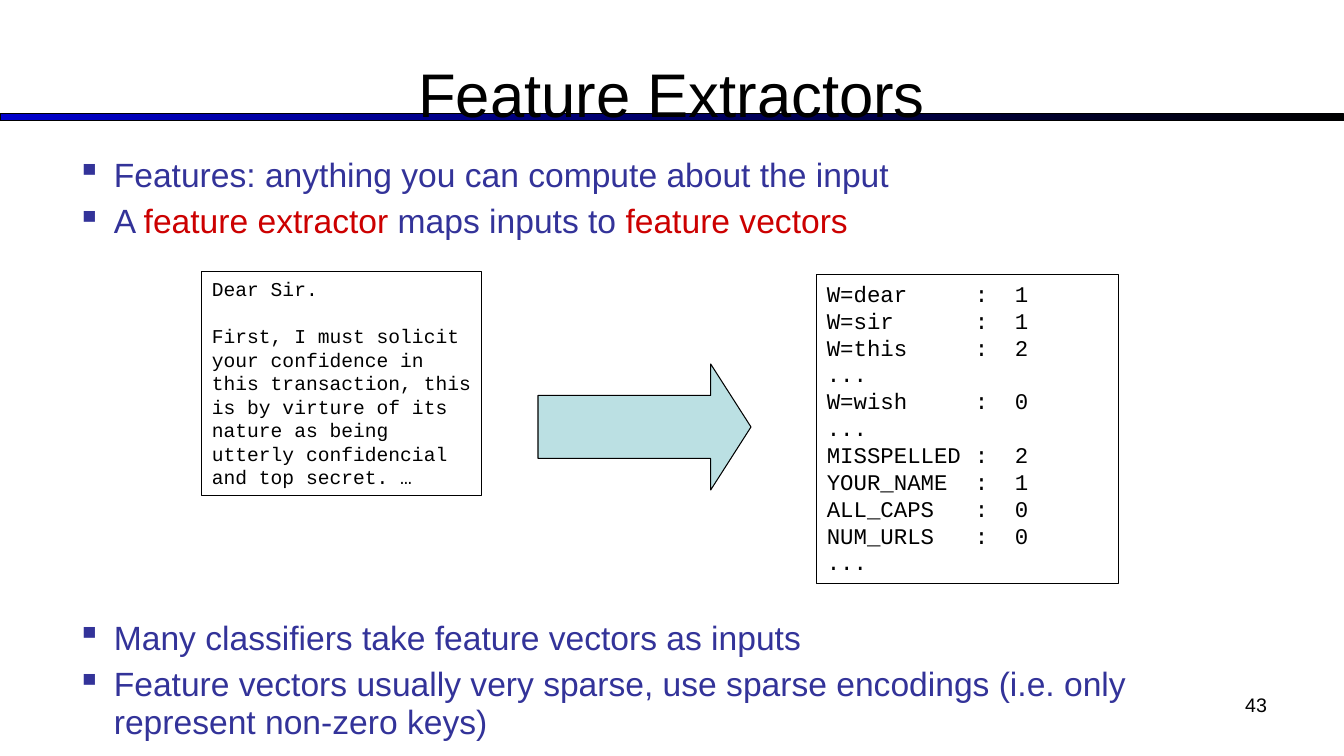
"""Build the Feature Extractors slide."""
from lxml import etree
from pptx import Presentation
from pptx import util as u
from pptx.dml.color import RGBColor
from pptx.enum import shapes, text
from pptx.oxml.ns import qn

PX = 12192000 / 1344
BLACK = RGBColor(0x00, 0x00, 0x00)
BLUE = RGBColor(0x00, 0x00, 0xCC)
INDIGO = RGBColor(0x33, 0x33, 0x99)
RED = RGBColor(0xCC, 0x00, 0x00)
TEAL = RGBColor(0xBB, 0xE0, 0xE3)

INTRO = [
    [("Features: anything you can compute about the input", INDIGO)],
    [("A ", INDIGO), ("feature extractor", RED),
     (" maps inputs to ", INDIGO), ("feature vectors", RED)],
]
CLOSING = [
    [("Many classifiers take feature vectors as inputs", INDIGO)],
    [("Feature vectors usually very sparse, use sparse encodings "
      "(i.e. only represent non-zero keys)", INDIGO)],
]
LETTER = [
    "Dear Sir.",
    "First, I must solicit your confidence in this transaction, this is by "
    "virture of its nature as being utterly confidencial and top secret. …",
]
FEATURES = [
    "W=dear\t:\t1", "W=sir\t:\t1", "W=this\t:\t2", "...", "W=wish\t:\t0", "...",
    "MISSPELLED\t:\t2", "YOUR_NAME\t:\t1", "ALL_CAPS\t:\t0", "NUM_URLS\t:\t0", "...",
]


def px(length):
    """Turn a length in px into EMU."""
    return u.Emu(round(length * PX))


def box(place):
    """Turn left, top, width and height in px into EMU."""
    return [px(length) for length in place]


def style(paragraph, size, face, color=BLACK, pitch=None):
    """Set the font and the line pitch of a paragraph."""
    if pitch:
        paragraph.line_spacing = u.Pt(pitch)
    paragraph.font.size = u.Pt(size)
    paragraph.font.name = face
    paragraph.font.color.rgb = color


def add_shape(slide, kind, place):
    """Add a thinly outlined shape without fill or shadow."""
    shape = slide.shapes.add_shape(kind, *box(place))
    shape.shadow.inherit = False
    shape.fill.background()
    shape.line.color.rgb = BLACK
    shape.line.width = u.Pt(0.75)
    return shape


def add_rule(slide):
    """Add the blue to black band under the title."""
    rule = add_shape(slide, shapes.MSO_SHAPE.RECTANGLE, (0, 114, 1344, 7))
    rule.fill.gradient()
    rule.fill.gradient_angle = 0
    for stop, color in zip(rule.fill.gradient_stops, (BLUE, BLACK)):
        stop.color.rgb = color


def add_label(slide, place, words, size, align, pitch=None):
    """Add a single line of text and return its frame."""
    frame = slide.shapes.add_textbox(*box(place)).text_frame
    frame.word_wrap = True
    line = frame.paragraphs[0]
    line.text = words
    line.alignment = align
    style(line, size, "Arial", pitch=pitch)
    return frame


def add_bullets(slide, place, points):
    """Add a list of square-bulleted points made of coloured runs."""
    frame = slide.shapes.add_textbox(*box(place)).text_frame
    frame.word_wrap = True
    for index, pieces in enumerate(points):
        point = frame.add_paragraph() if index else frame.paragraphs[0]
        point.space_before = u.Pt(6)
        style(point, 24, "Arial", INDIGO, 27.1)
        for words, color in pieces:
            run = point.add_run()
            run.text = words
            if color != INDIGO:
                run.font.color.rgb = color
        properties = point._p.get_or_add_pPr()
        properties.set("marL", str(px(37)))
        properties.set("indent", str(px(-37)))
        bullet = etree.Element(qn("a:buChar"), char="▪")
        properties.find(qn("a:defRPr")).addprevious(bullet)


def add_tab_stops(paragraph, stops):
    """Set left tab stops, given in px, on a paragraph."""
    tabs = etree.Element(qn("a:tabLst"))
    for stop in stops:
        etree.SubElement(tabs, qn("a:tab"), pos=str(px(stop)), algn="l")
    paragraph._p.get_or_add_pPr().find(qn("a:defRPr")).addprevious(tabs)


def add_listing(slide, place, lines, size, gap=0, stops=()):
    """Add a framed block of monospaced lines."""
    frame = add_shape(slide, shapes.MSO_SHAPE.RECTANGLE, place).text_frame
    frame.word_wrap = True
    frame.auto_size = text.MSO_AUTO_SIZE.SHAPE_TO_FIT_TEXT
    frame.vertical_anchor = text.MSO_ANCHOR.TOP
    for index, words in enumerate(lines):
        line = frame.add_paragraph() if index else frame.paragraphs[0]
        line.text = words
        line.alignment = text.PP_ALIGN.LEFT
        if index and gap:
            line.space_before = u.Pt(gap)
        style(line, size, "Courier New", pitch=size * 1.2)
        if stops:
            add_tab_stops(line, stops)


def add_arrow(slide):
    """Add the block arrow from the letter to its features."""
    arrow = add_shape(slide, shapes.MSO_SHAPE.RIGHT_ARROW, (538, 364, 213, 126))
    arrow.adjustments[0] = 0.5
    arrow.adjustments[1] = 0.32
    arrow.fill.solid()
    arrow.fill.fore_color.rgb = TEAL


def main():
    """Build and save the slide."""
    deck = Presentation()
    deck.slide_width, deck.slide_height = px(1344), px(756)
    slide = deck.slides.add_slide(deck.slide_layouts[6])
    add_rule(slide)
    title = add_label(slide, (67, 25, 1210, 126), "Feature Extractors", 44,
                      text.PP_ALIGN.CENTER, 54.9)
    title.vertical_anchor = text.MSO_ANCHOR.MIDDLE
    title.margin_top = px(12)
    add_bullets(slide, (67, 151, 1210, 100), INTRO)
    add_bullets(slide, (67, 614, 1210, 136), CLOSING)
    add_listing(slide, (202, 272, 280, 224), LETTER, 14, gap=16.8)
    add_arrow(slide)
    add_listing(slide, (817, 275, 302, 309), FEATURES, 16, stops=(148, 188))
    add_label(slide, (964, 688, 313, 52), "43", 14, text.PP_ALIGN.RIGHT)
    deck.save("out.pptx")


if __name__ == "__main__":
    main()
